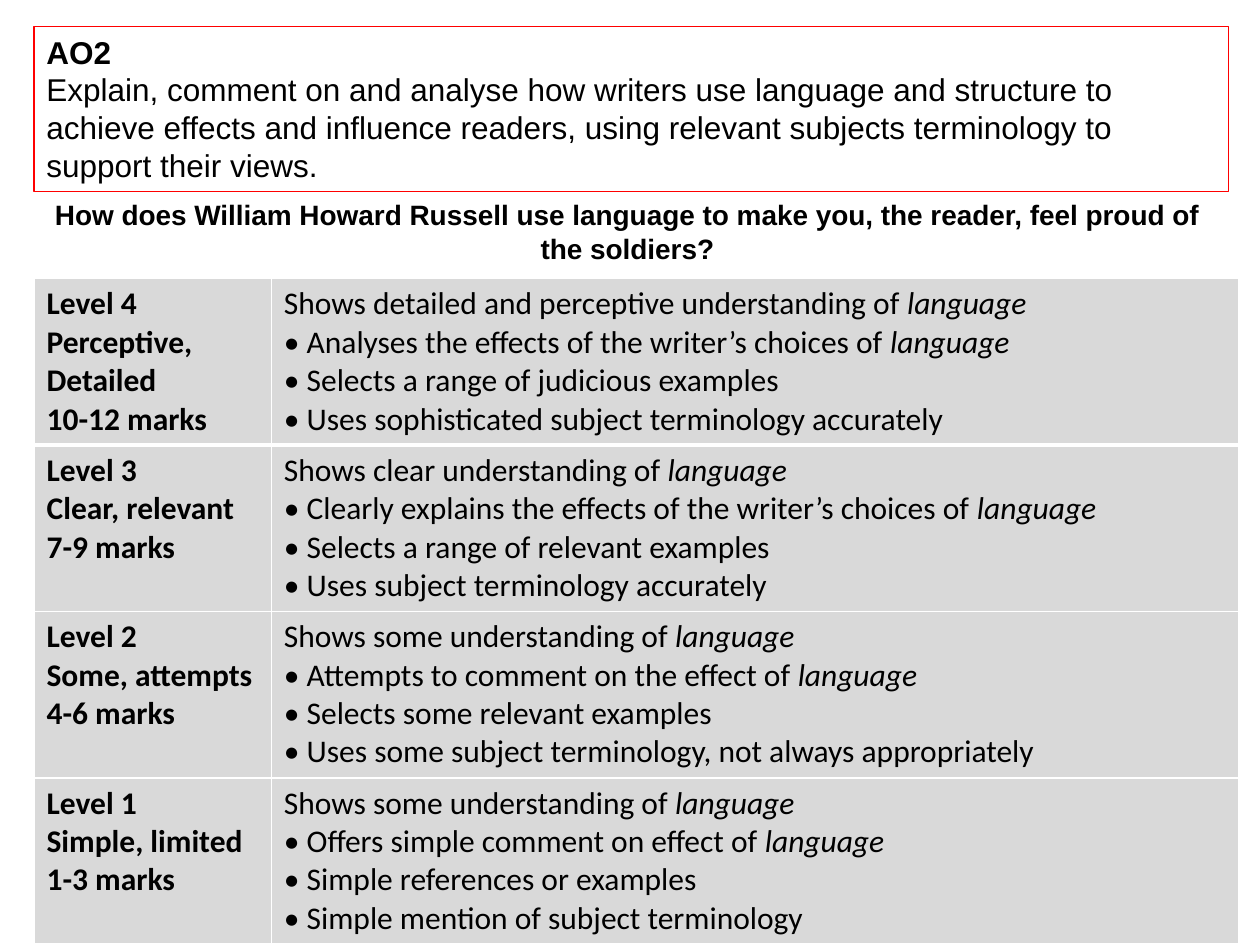
from lxml.etree import SubElement
from pptx import Presentation
from pptx.dml.color import RGBColor
from pptx.enum.shapes import MSO_SHAPE
from pptx.enum.text import MSO_ANCHOR, MSO_AUTO_SIZE, PP_ALIGN
from pptx.oxml.ns import qn
from pptx.util import Inches, Pt

LEVELS = [
    (["Level 4", "Perceptive, Detailed", "10-12 marks"],
     ["Shows detailed and perceptive understanding of *language*",
      "• Analyses the effects of the writer’s choices of *language*",
      "• Selects a range of judicious examples",
      "• Uses sophisticated subject terminology accurately"]),
    (["Level 3", "Clear, relevant", "7-9 marks"],
     ["Shows clear understanding of *language*",
      "• Clearly explains the effects of the writer’s choices of *language*",
      "• Selects a range of relevant examples",
      "• Uses subject terminology accurately"]),
    (["Level 2", "Some, attempts", "4-6 marks"],
     ["Shows some understanding of *language*",
      "• Attempts to comment on the effect of *language*",
      "• Selects some relevant examples",
      "• Uses some subject terminology, not always appropriately"]),
    (["Level 1", "Simple, limited", "1-3 marks"],
     ["Shows some understanding of *language*",
      "• Offers simple comment on effect of *language*",
      "• Simple references or examples",
      "• Simple mention of subject terminology"]),
]


def color(code):
    return RGBColor.from_string(code)


def write(frame, lines, font="Arial", size=18, bold=(), align=PP_ALIGN.LEFT):
    """Fill a frame line by line; *stars* mark italics, bold lists line numbers."""
    frame.word_wrap = True
    for i, line in enumerate(lines):
        para = frame.paragraphs[0] if i == 0 else frame.add_paragraph()
        para.alignment = align
        for j, part in enumerate(line.split("*")):
            if not part:
                continue
            run = para.add_run()
            run.text = part
            run.font.name = font
            run.font.size = Pt(size)
            run.font.bold = i in bold
            run.font.italic = j % 2 == 1
            run.font.color.rgb = color("000000")


class Deck:
    red, gray, white = "FF0000", "D9D9D9", "FFFFFF"

    def __init__(self, wide, high):
        self.file = Presentation()
        self.file.slide_width = Inches(wide)
        self.file.slide_height = Inches(high)
        self.slide = self.file.slides.add_slide(self.file.slide_layouts[5])

    def area(self, left, top, width, height):
        """Turn percentages of the slide into lengths."""
        wide, high = self.file.slide_width, self.file.slide_height
        return [int(share * full / 100) for share, full in
                zip((left, top, width, height), (wide, high, wide, high))]

    def title(self, text, *area, **style):
        shape = self.slide.shapes.title
        shape.left, shape.top, shape.width, shape.height = self.area(*area)
        shape.text_frame.auto_size = MSO_AUTO_SIZE.NONE
        shape.text_frame.vertical_anchor = MSO_ANCHOR.TOP
        write(shape.text_frame, [text], **style)

    def box(self, lines, *area, **style):
        shape = self.slide.shapes.add_shape(MSO_SHAPE.RECTANGLE, *self.area(*area))
        shape.shadow.inherit = False
        shape.fill.background()
        shape.line.color.rgb = color(self.red)
        shape.line.width = Pt(0.75)
        shape.text_frame.vertical_anchor = MSO_ANCHOR.TOP
        write(shape.text_frame, lines, **style)

    def edge(self, cell, side, width):
        line = SubElement(cell._tc.get_or_add_tcPr(), qn(f"a:ln{side}"), w=str(Pt(width)))
        fill = SubElement(line, qn("a:solidFill"))
        SubElement(fill, qn("a:srgbClr"), val=self.white)

    def table(self, rows, shares, *area):
        left, top, width, height = self.area(*area)
        grid = self.slide.shapes.add_table(
            len(rows), len(shares), left, top, width, height).table
        for col, share in zip(grid.columns, shares):
            col.width = int(width * share)
        for r, row in enumerate(rows):
            for c, lines in enumerate(row):
                cell = grid.cell(r, c)
                # Borders come before the fill; a thick rule follows the first row
                for side in "LRTB":
                    thick = (r, side) in ((0, "B"), (1, "T"))
                    self.edge(cell, side, 3 if thick else 1)
                cell.fill.solid()
                cell.fill.fore_color.rgb = color(self.gray)
                bold = range(len(lines)) if c == 0 else ()
                write(cell.text_frame, lines, font="Calibri", bold=bold)


def main():
    deck = Deck(10, 7.5)

    # Assessment objective
    deck.box(["AO2",
              "Explain, comment on and analyse how writers use language and "
              "structure to achieve effects and influence readers, using relevant "
              "subjects terminology to support their views."],
             2.7, 2.8, 94.8, 17.47, bold=[0])

    # Question
    deck.title("How does William Howard Russell use language to make you, "
               "the reader, feel proud of the soldiers?",
               2.7, 20.27, 94.2, 9, size=16, bold=[0], align=PP_ALIGN.CENTER)

    # Mark scheme
    deck.table(LEVELS, (0.197, 0.803), 2.7, 29.47, 95.6, 69.33)

    deck.file.save("out.pptx")


if __name__ == "__main__":
    main()
